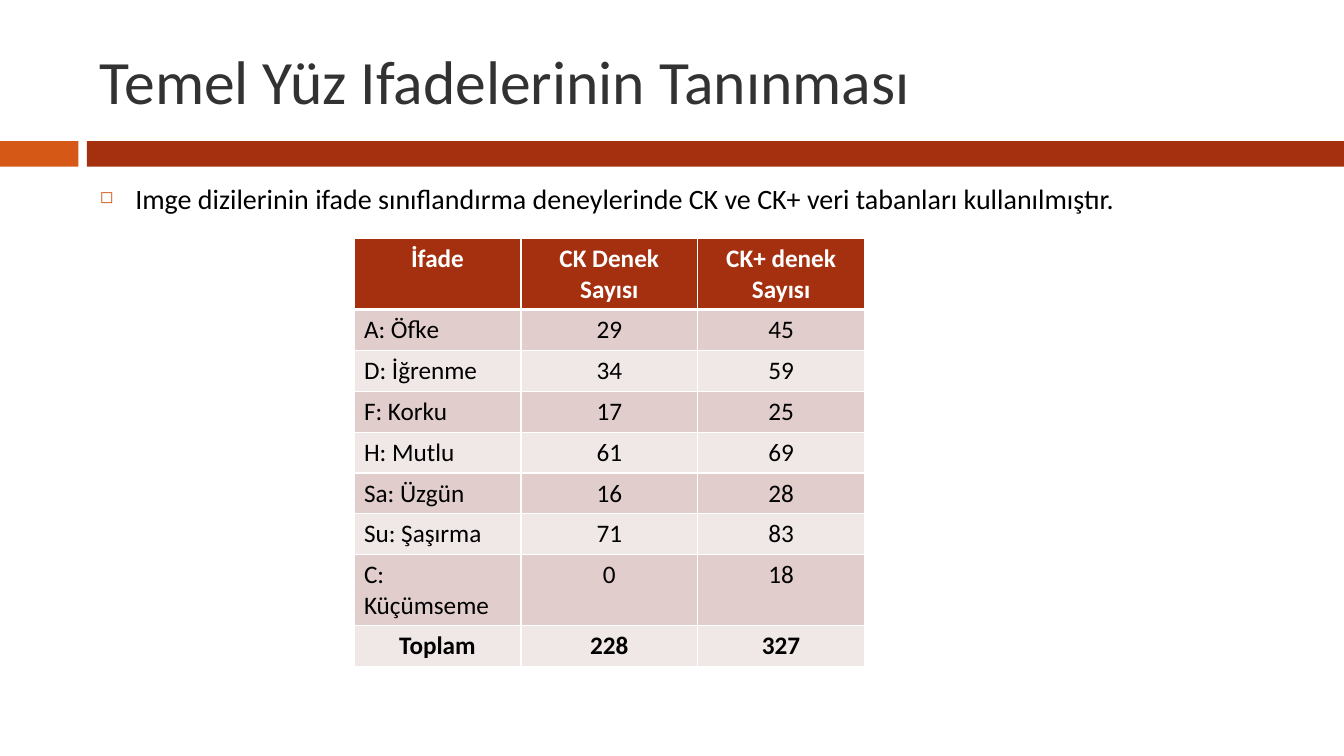
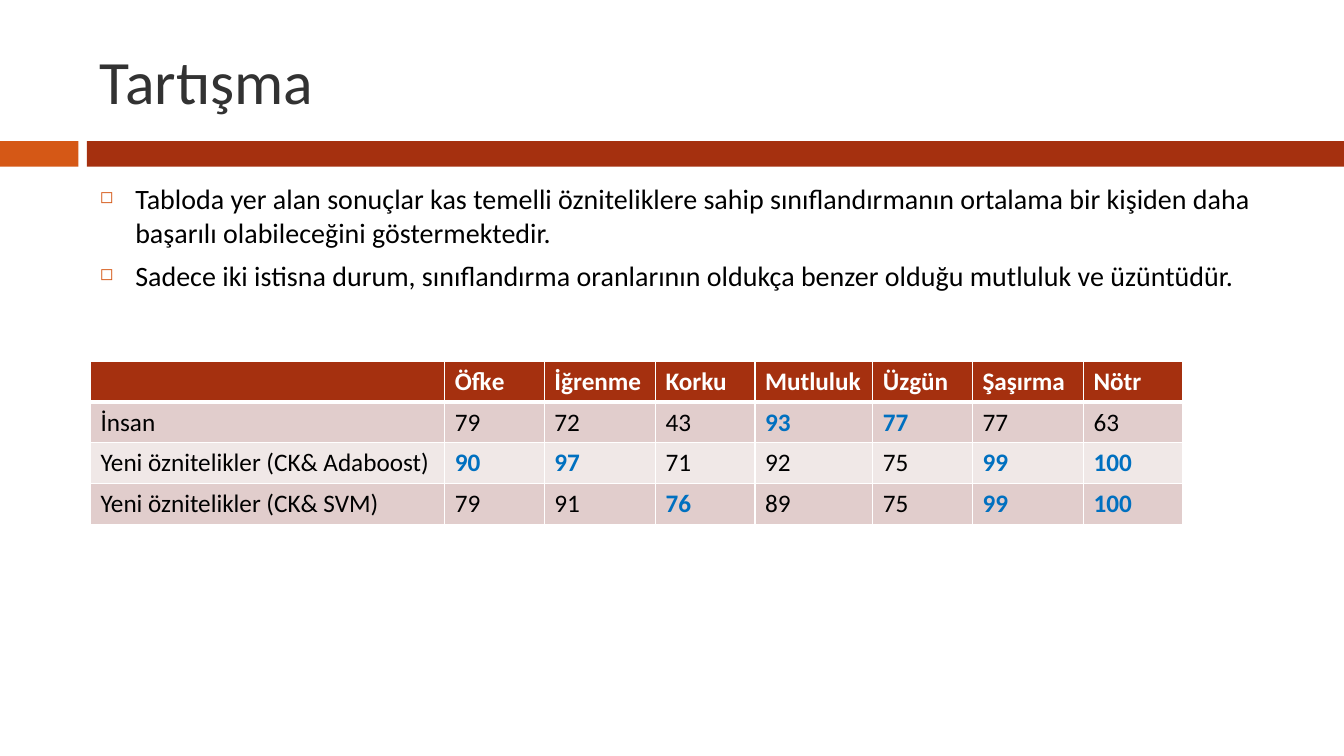
from lxml import etree
from pptx import Presentation
from pptx import util as u
from pptx.dml.color import RGBColor
from pptx.enum import shapes, text
from pptx.oxml import ns

COLORS = {
    "accent": "D55816", "main": "A5300F", "title": "323232", "body": "000000",
    "white": "FFFFFF", "band_dark": "E1CDCC", "band_light": "F0E8E7", "best": "0070C0",
}
FONT = "Calibri"
SLIDE_WIDTH, SLIDE_HEIGHT = 33.87, 19.05
TEXT_LEFT, TEXT_WIDTH = 2.27, 30.2
ROW_HEIGHT = 1.03
CENTER = text.PP_ALIGN.CENTER
LEFT = text.PP_ALIGN.LEFT


def rgb(name):
    return RGBColor.from_string(COLORS[name])


def add_xml(parent, tag, **attributes):
    return etree.SubElement(parent, ns.qn(tag), attributes)


class Deck:
    """Holds the shared style and the slide being built."""

    def __init__(self):
        self.prs = Presentation()
        self.prs.slide_width = u.Cm(SLIDE_WIDTH)
        self.prs.slide_height = u.Cm(SLIDE_HEIGHT)
        self.slide = None

    def new_slide(self, title):
        self.slide = self.prs.slides.add_slide(self.prs.slide_layouts[6])
        self.band(0, 1.98, "accent")
        self.band(2.19, SLIDE_WIDTH - 2.19, "main")
        heading = self.text_frame(0.64, 2.74, text.MSO_ANCHOR.MIDDLE)
        self.add_words(heading.paragraphs[0], title, size=44, color="title")

    def band(self, left, width, color):
        bar = self.slide.shapes.add_shape(
            shapes.MSO_SHAPE.RECTANGLE, u.Cm(left), u.Cm(3.56), u.Cm(width), u.Cm(0.64))
        bar.shadow.inherit = False
        bar.fill.solid()
        bar.fill.fore_color.rgb = rgb(color)
        bar.line.fill.background()

    def text_frame(self, top, height, anchor):
        box = self.slide.shapes.add_textbox(
            u.Cm(TEXT_LEFT), u.Cm(top), u.Cm(TEXT_WIDTH), u.Cm(height))
        frame = box.text_frame
        frame.word_wrap = True
        frame.vertical_anchor = anchor
        return frame

    def add_words(self, paragraph, words, size, color, bold=False, align=LEFT):
        paragraph.alignment = align
        run = paragraph.add_run()
        run.text = words
        font_format = {"name": FONT, "size": u.Pt(size), "bold": bold}
        for key, value in font_format.items():
            setattr(run.font, key, value)
        run.font.color.rgb = rgb(color)

    def bullets(self, *points):
        frame = self.text_frame(4.45, 12.5, text.MSO_ANCHOR.TOP)
        for index, point in enumerate(points):
            paragraph = frame.add_paragraph() if index else frame.paragraphs[0]
            self.add_words(paragraph, point, size=20, color="body")
            paragraph.space_before = u.Pt(7)
            props = paragraph._p.get_or_add_pPr()
            indent = u.Cm(0.89)
            props.set("marL", str(indent))
            props.set("indent", str(-indent))
            add_xml(add_xml(props, "a:buClr"), "a:srgbClr", val=COLORS["accent"])
            add_xml(props, "a:buSzPct", val="60000")
            add_xml(props, "a:buChar", char="◻")

    def borders(self, cell, row):
        """White grid with a thicker rule under the header."""
        widths = {"L": 1, "R": 1, "T": 3 if row == 1 else 1, "B": 3 if row == 0 else 1}
        props = cell._tc.get_or_add_tcPr()
        for side, width in widths.items():
            line = add_xml(props, f"a:ln{side}", w=str(u.Pt(width)))
            add_xml(add_xml(line, "a:solidFill"), "a:srgbClr", val=COLORS["white"])

    def table(self, left, top, widths, rows, style):
        """Draw rows; style(row, column) gives the text format of a cell."""
        grid = self.slide.shapes.add_table(
            len(rows), len(widths), u.Cm(left), u.Cm(top),
            u.Cm(sum(widths)), u.Cm(ROW_HEIGHT * len(rows))).table
        for column, width in zip(grid.columns, widths):
            column.width = u.Cm(width)
        for r, values in enumerate(rows):
            grid.rows[r].height = u.Cm(ROW_HEIGHT)
            band = "main" if r == 0 else "band_dark" if r % 2 else "band_light"
            for c, value in enumerate(values):
                cell = grid.cell(r, c)
                self.borders(cell, r)
                cell.fill.solid()
                cell.fill.fore_color.rgb = rgb(band)
                cell_format = {"size": 18, "color": "body"} | style(r, c)
                if r == 0:
                    cell_format |= {"color": "white", "bold": True}
                if value != "":
                    self.add_words(cell.text_frame.paragraphs[0], str(value), **cell_format)


def recognition_slide(deck):
    deck.new_slide("Temel Yüz Ifadelerinin Tanınması")
    deck.bullets("Imge dizilerinin ifade sınıflandırma deneylerinde CK ve CK+ "
                 "veri tabanları kullanılmıştır.")
    subjects = [
        ("A: Öfke", 29, 45), ("D: İğrenme", 34, 59), ("F: Korku", 17, 25),
        ("H: Mutlu", 61, 69), ("Sa: Üzgün", 16, 28), ("Su: Şaşırma", 71, 83),
        ("C: Küçümseme", 0, 18),
    ]
    total_row = len(subjects) + 1
    totals = [sum(counts) for counts in list(zip(*subjects))[1:]]
    rows = [("İfade", "CK Denek Sayısı", "CK+ denek Sayısı"), *subjects, ("Toplam", *totals)]

    def style(r, c):
        is_label = c == 0 and 0 < r < total_row
        return {"align": LEFT if is_label else CENTER, "bold": r == total_row}

    deck.table(8.92, 6.02, [4.21, 4.45, 4.21], rows, style)


def discussion_slide(deck):
    deck.new_slide("Tartışma")
    deck.bullets(
        "Tabloda yer alan sonuçlar kas temelli özniteliklere sahip sınıflandırmanın "
        "ortalama bir kişiden daha başarılı olabileceğini göstermektedir.",
        "Sadece iki istisna durum, sınıflandırma oranlarının oldukça benzer olduğu "
        "mutluluk ve üzüntüdür.")
    emotions = ("", "Öfke", "İğrenme", "Korku", "Mutluluk", "Üzgün", "Şaşırma", "Nötr")
    rates = [
        ("İnsan", 79, 72, 43, 93, 77, 77, 63),
        ("Yeni öznitelikler (CK& Adaboost)", 90, 97, 71, 92, 75, 99, 100),
        ("Yeni öznitelikler (CK& SVM)", 79, 91, 76, 89, 75, 99, 100),
    ]

    def style(r, c):
        """Highlight the best rate of each emotion."""
        is_best = r > 0 and c > 0 and rates[r - 1][c] == max(row[c] for row in rates)
        return {"color": "best", "bold": True} if is_best else {}

    deck.table(2.28, 9.1, [8.93, 2.51, 2.8, 2.51, 2.97, 2.51, 2.8, 2.51],
               [emotions, *rates], style)


def main():
    deck = Deck()
    recognition_slide(deck)
    discussion_slide(deck)
    deck.prs.save("out.pptx")


if __name__ == "__main__":
    main()
